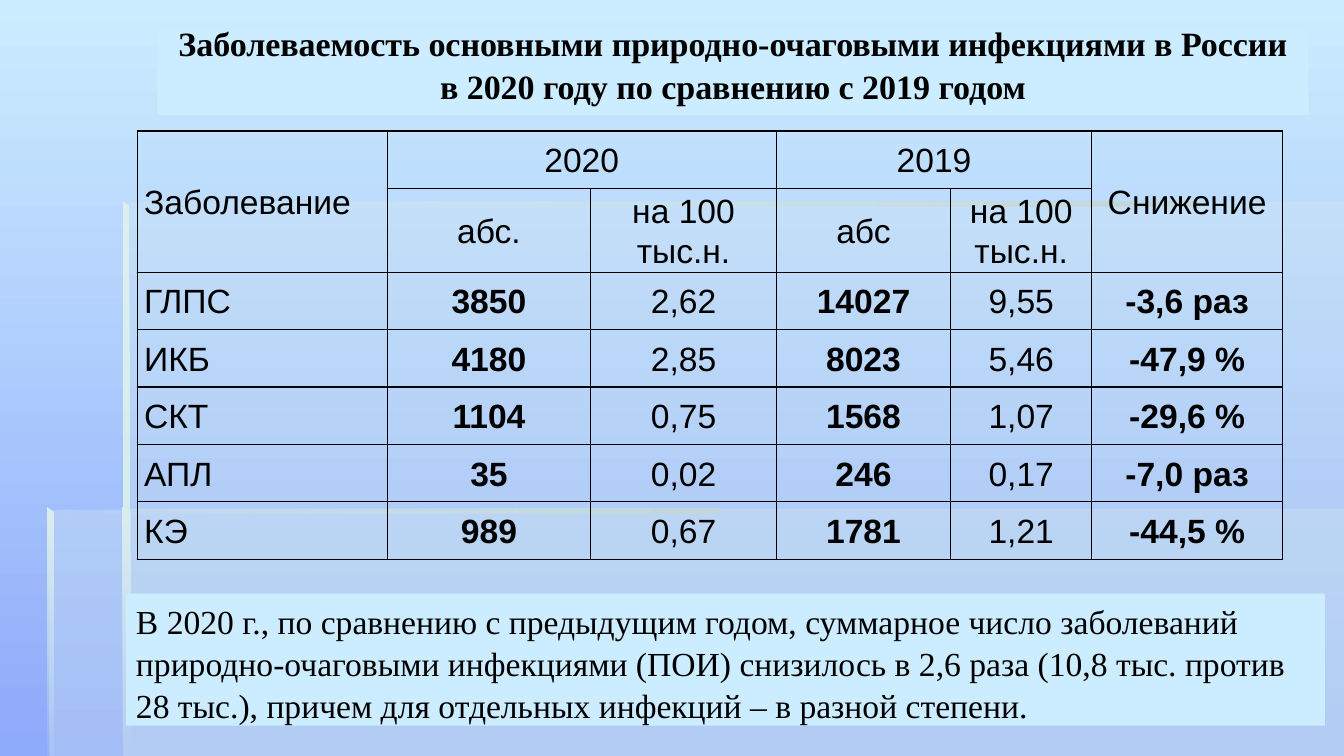
from lxml import etree
from pptx import Presentation
from pptx.dml.color import RGBColor
from pptx.enum.shapes import MSO_SHAPE
from pptx.enum.text import MSO_ANCHOR, MSO_AUTO_SIZE, PP_ALIGN
from pptx.oxml import parse_xml
from pptx.oxml.ns import nsdecls, qn
from pptx.util import Inches, Pt

# Content
TITLE = ("Заболеваемость основными природно-очаговыми инфекциями в России "
         "в 2020 году по сравнению с 2019 годом")
SUMMARY = ("В 2020 г., по сравнению с предыдущим годом, суммарное число заболеваний "
           "природно-очаговыми инфекциями (ПОИ) снизилось в 2,6 раза (10,8 тыс. против "
           "28 тыс.), причем для отдельных инфекций – в разной степени.")
ROWS = [
    ("Заболевание", "2020", "", "2019", "", "Снижение"),
    ("", "абс.", "на 100 тыс.н.", "абс", "на 100 тыс.н.", ""),
    ("ГЛПС", "3850", "2,62", "14027", "9,55", "-3,6 раз"),
    ("ИКБ", "4180", "2,85", "8023", "5,46", "-47,9 %"),
    ("СКТ", "1104", "0,75", "1568", "1,07", "-29,6 %"),
    ("АПЛ", "35", "0,02", "246", "0,17", "-7,0 раз"),
    ("КЭ", "989", "0,67", "1781", "1,21", "-44,5 %"),
]
MERGES = [((0, 0), (1, 0)), ((0, 1), (0, 2)), ((0, 3), (0, 4)), ((0, 5), (1, 5))]
HEADER_ROWS = 2
BOLD_COLUMNS = (1, 3, 5)
COLUMN_WIDTHS = (2.48, 2.02, 1.84, 1.73, 1.4, 1.89)
ROW_HEIGHTS = (0.57, 0.83) + (0.57,) * 5

# Backdrop: outline points, colour stops (colour, opacity %), gradient angle
PANEL = [("D6EDEE", 30)]
BAR = [("D6EDEE", 0), ("C4D9DA", 100)]
BACKDROP = [
    ([(1.22, 5.05), (1.22, 7.5), (13.33, 7.5), (13.33, 5.05)], PANEL, 0),
    ([(1.25, 5.06), (0.49, 5.06), (0.49, 7.5), (13.33, 7.5), (13.33, 2), (1.25, 2)], PANEL, 0),
    ([(1.22, 2), (1.22, 2.05), (11.89, 2.05), (11.89, 2)], BAR, 0),
    ([(1.22, 2), (1.22, 5.1), (1.29, 5.1), (1.28, 2.04)],
     [("DCEFF0", 100), ("D6EDEE", 100)], 270),
    ([(1.22, 7.5), (1.29, 7.5), (1.28, 5.08), (1.22, 5.04)],
     [("DCEFF0", 100), ("D6EDEE", 0)], 270),
    ([(0.47, 5.04), (0.47, 5.09), (7.13, 5.09), (7.13, 5.04)], BAR, 0),
    ([(0.47, 5.04), (0.47, 7.5), (0.53, 7.5), (0.53, 5.09)],
     [("DCEFF0", 100), ("D6EDEE", 10)], 270),
]
BOX_FILL = "CCECFF"
BLACK = "000000"


def color(value):
    return RGBColor.from_string(value)


def fill_solid(fill, value):
    fill.solid()
    fill.fore_color.rgb = color(value)


def fill_gradient(fill, colors, angle):
    fill.gradient()
    fill.gradient_angle = angle
    for position, (stop, value) in enumerate(zip(fill.gradient_stops, colors)):
        stop.position = position
        stop.color.rgb = color(value)


def place(shape, left, top, width, height):
    shape.left, shape.top = Inches(left), Inches(top)
    shape.width, shape.height = Inches(width), Inches(height)


def write(frame, text, font_name, size, align, spacing, bold=False):
    frame.text = text
    frame.word_wrap = True
    paragraph = frame.paragraphs[0]
    paragraph.alignment = align
    paragraph.line_spacing = spacing
    for run in paragraph.runs:
        run.font.name, run.font.size, run.font.bold = font_name, Pt(size), bold
        run.font.color.rgb = color(BLACK)


def add_borders(cell):
    properties = cell._tc.get_or_add_tcPr()
    for index, side in enumerate("LRTB"):
        properties.insert(index, parse_xml(
            f'<a:ln{side} {nsdecls("a")} w="12700"><a:solidFill>'
            f'<a:srgbClr val="{BLACK}"/></a:solidFill></a:ln{side}>'))


presentation = Presentation()
presentation.slide_width, presentation.slide_height = Inches(13.33), Inches(7.5)
slide = presentation.slides.add_slide(presentation.slide_layouts[5])
fill_gradient(slide.background.fill, ("CCECFF", "8EAAFA"), 270)

# Backdrop panels and bars
for points, stops, angle in BACKDROP:
    corners = [(Inches(x), Inches(y)) for x, y in points]
    builder = slide.shapes.build_freeform(*corners[0])
    builder.add_line_segments(corners[1:], close=True)
    panel = builder.convert_to_shape()
    panel.shadow.inherit = False
    panel.line.fill.background()
    if len(stops) == 1:
        fill_solid(panel.fill, stops[0][0])
    else:
        fill_gradient(panel.fill, [value for value, _ in stops], angle)
    for element, (_, opacity) in zip(panel._element.spPr.iter(qn("a:srgbClr")), stops):
        etree.SubElement(element, qn("a:alpha")).set("val", str(opacity * 1000))

# Title
title = slide.shapes.title
place(title, 1.56, 0.31, 11.42, 0.83)
fill_solid(title.fill, BOX_FILL)
frame = title.text_frame
write(frame, TITLE, "Times New Roman", 24.3, PP_ALIGN.CENTER, 1.05, bold=True)
frame.auto_size = MSO_AUTO_SIZE.NONE
frame.vertical_anchor = MSO_ANCHOR.MIDDLE
frame.margin_left = frame.margin_right = Inches(0.12)
frame.margin_top, frame.margin_bottom = 0, Inches(0.2)

# Table
table = slide.shapes.add_table(
    len(ROWS), len(COLUMN_WIDTHS), Inches(1.36), Inches(1.3),
    Inches(sum(COLUMN_WIDTHS)), Inches(sum(ROW_HEIGHTS))).table
table.first_row = table.horz_banding = False
for column, width in zip(table.columns, COLUMN_WIDTHS):
    column.width = Inches(width)
for row, height in zip(table.rows, ROW_HEIGHTS):
    row.height = Inches(height)
for row_index, values in enumerate(ROWS):
    for column_index, value in enumerate(values):
        cell = table.cell(row_index, column_index)
        align = PP_ALIGN.CENTER if column_index else PP_ALIGN.LEFT
        bold = row_index >= HEADER_ROWS and column_index in BOLD_COLUMNS
        write(cell.text_frame, value, "Arial", 24, align, 1.07, bold)
        cell.vertical_anchor = MSO_ANCHOR.MIDDLE
        cell.margin_left = cell.margin_right = Inches(0.07)
        cell.margin_top = cell.margin_bottom = 0
        cell.fill.background()
        add_borders(cell)
for first, last in MERGES:
    table.cell(*first).merge(table.cell(*last))

# Summary
summary = slide.shapes.add_shape(MSO_SHAPE.RECTANGLE, 0, 0, 0, 0)
place(summary, 1.25, 5.89, 11.89, 1.31)
summary.shadow.inherit = False
summary.line.fill.background()
fill_solid(summary.fill, BOX_FILL)
write(summary.text_frame, SUMMARY, "Times New Roman", 24, PP_ALIGN.LEFT, 1.05)
summary.text_frame.vertical_anchor = MSO_ANCHOR.TOP

presentation.save("out.pptx")
